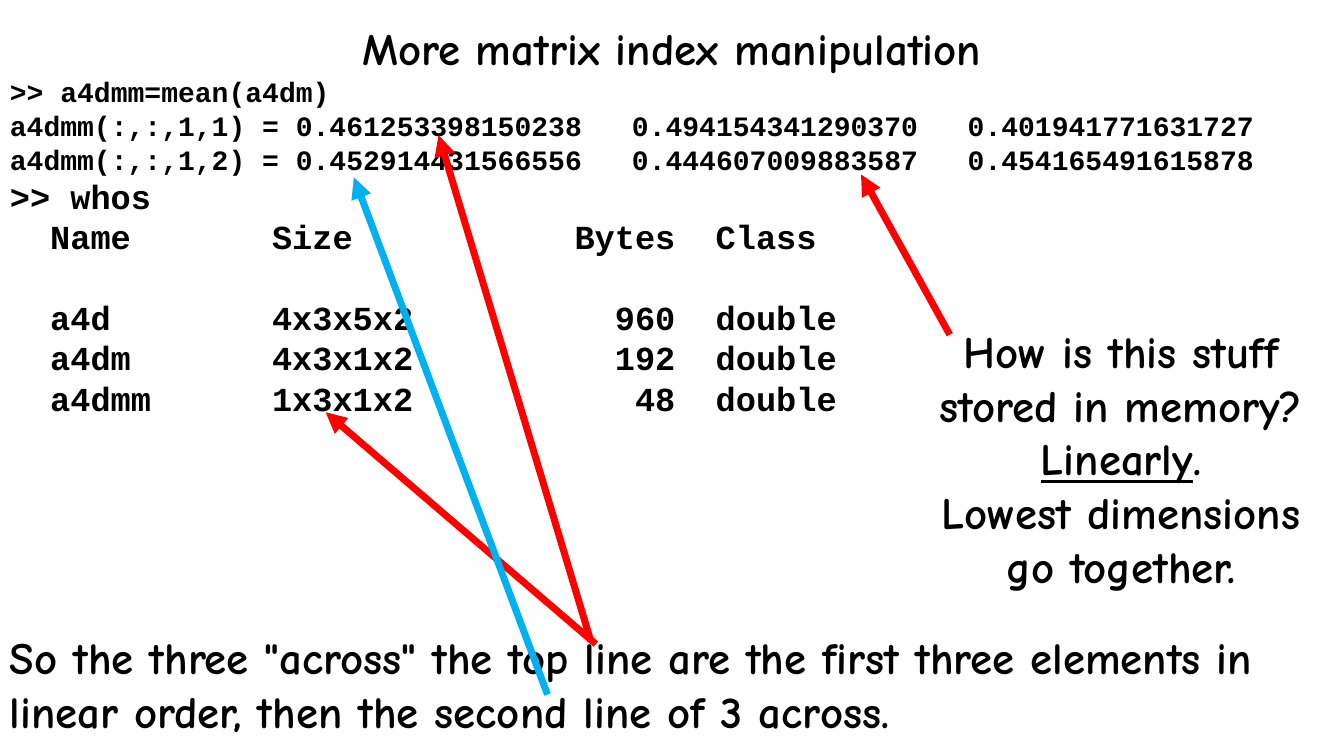
from lxml import etree
from pptx import Presentation
from pptx.dml.color import RGBColor
from pptx.enum.shapes import MSO_CONNECTOR
from pptx.enum.text import MSO_AUTO_SIZE, PP_ALIGN
from pptx.oxml.ns import qn
from pptx.util import Inches, Pt

LINE = MSO_CONNECTOR.STRAIGHT
LEFT, MID = PP_ALIGN.LEFT, PP_ALIGN.CENTER
FIT = MSO_AUTO_SIZE.SHAPE_TO_FIT_TEXT
HUES = {"ink": "000000", "red": "FF0000", "blue": "00B0F0"}
HAND, CODE = "Comic Neue", "Courier New"
VALUE_TABS = ((6.17, "l"), (9.5, "l"))
WHOS_TABS = ((0.4, "l"), (2.6, "l"), (6.6, "r"), (7, "l"))


class Page:
    def __init__(self, deck):
        self.slide = deck.slides.add_slide(deck.slide_layouts[6])

    def box(self, left, top, width, height):
        shape = self.slide.shapes.add_textbox(
            Inches(left), Inches(top), Inches(width), Inches(height))
        frame = shape.text_frame
        frame.word_wrap = True
        frame.auto_size = FIT
        return frame

    def para(self, frame, text, size=32, face=HAND, align=LEFT, tabs=(), gap=0):
        para = frame.paragraphs[0]
        if para.runs:
            para = frame.add_paragraph()
        para.alignment = align
        para.space_before = Pt(gap)
        font = para.font
        font.name, font.size, font.bold = face, Pt(size), True
        font.color.rgb = RGBColor.from_string(HUES["ink"])
        if tabs:
            stops = etree.Element(qn("a:tabLst"))
            for pos, side in tabs:
                etree.SubElement(stops, qn("a:tab"), pos=str(Inches(pos)), algn=side)
            props = para._p.get_or_add_pPr()
            props.find(qn("a:defRPr")).addprevious(stops)
        para.add_run().text = text
        return para

    def arrow(self, start, end, hue="red"):
        points = [Inches(n) for n in (*start, *end)]
        link = self.slide.shapes.add_connector(LINE, *points)
        link.line.color.rgb = RGBColor.from_string(HUES[hue])
        link.line.width = Pt(5)
        etree.SubElement(link.line._get_or_add_ln(), qn("a:tailEnd"), type="triangle")
        etree.SubElement(link._element.spPr, qn("a:effectLst"))


def main():
    deck = Presentation()
    deck.slide_width, deck.slide_height = Inches(13.33), Inches(7.5)
    page = Page(deck)

    code = page.box(0, 0.16, 13.33, 4.07)
    page.para(code, "More matrix index manipulation", align=MID)
    page.para(code, ">> a4dmm=mean(a4dm)", 20, CODE)
    means = (
        ("0.461253398150238", "0.494154341290370", "0.401941771631727"),
        ("0.452914431566556", "0.444607009883587", "0.454165491615878"),
    )
    for num, row in enumerate(means, 1):
        text = f"a4dmm(:,:,1,{num}) = " + "\t".join(row)
        page.para(code, text, 20, CODE, tabs=VALUE_TABS)
    page.para(code, ">> whos", 24, CODE)
    whos = (
        ("Name", "Size", "Bytes", "Class"),
        ("a4d", "4x3x5x2", "960", "double"),
        ("a4dm", "4x3x1x2", "192", "double"),
        ("a4dmm", "1x3x1x2", "48", "double"),
    )
    for num, row in enumerate(whos):
        text = "\t" + "\t".join(row)
        page.para(code, text, 24, CODE, tabs=WHOS_TABS, gap=29 if num == 1 else 0)

    note = page.box(0, 6.2, 13.33, 1.18)
    page.para(note, 'So the three "across" the top line are the first three elements '
              "in linear order, then the second line of 3 across.")
    page.arrow((5.91, 6.39), (3.23, 4.09))

    aside = page.box(9, 3.16, 4.24, 2.79)
    page.para(aside, "How is this stuff stored in memory?", align=MID)
    answer = page.para(aside, "Linearly", align=MID)
    answer.runs[0].font.underline = True
    answer.add_run().text = "."
    page.para(aside, "Lowest dimensions go together.", align=MID)

    page.arrow((9.42, 3.32), (8.54, 1.73))
    page.arrow((5.86, 6.36), (4.35, 1.34))
    page.arrow((5.43, 6.89), (3.51, 1.76), "blue")
    deck.save("out.pptx")


if __name__ == "__main__":
    main()
